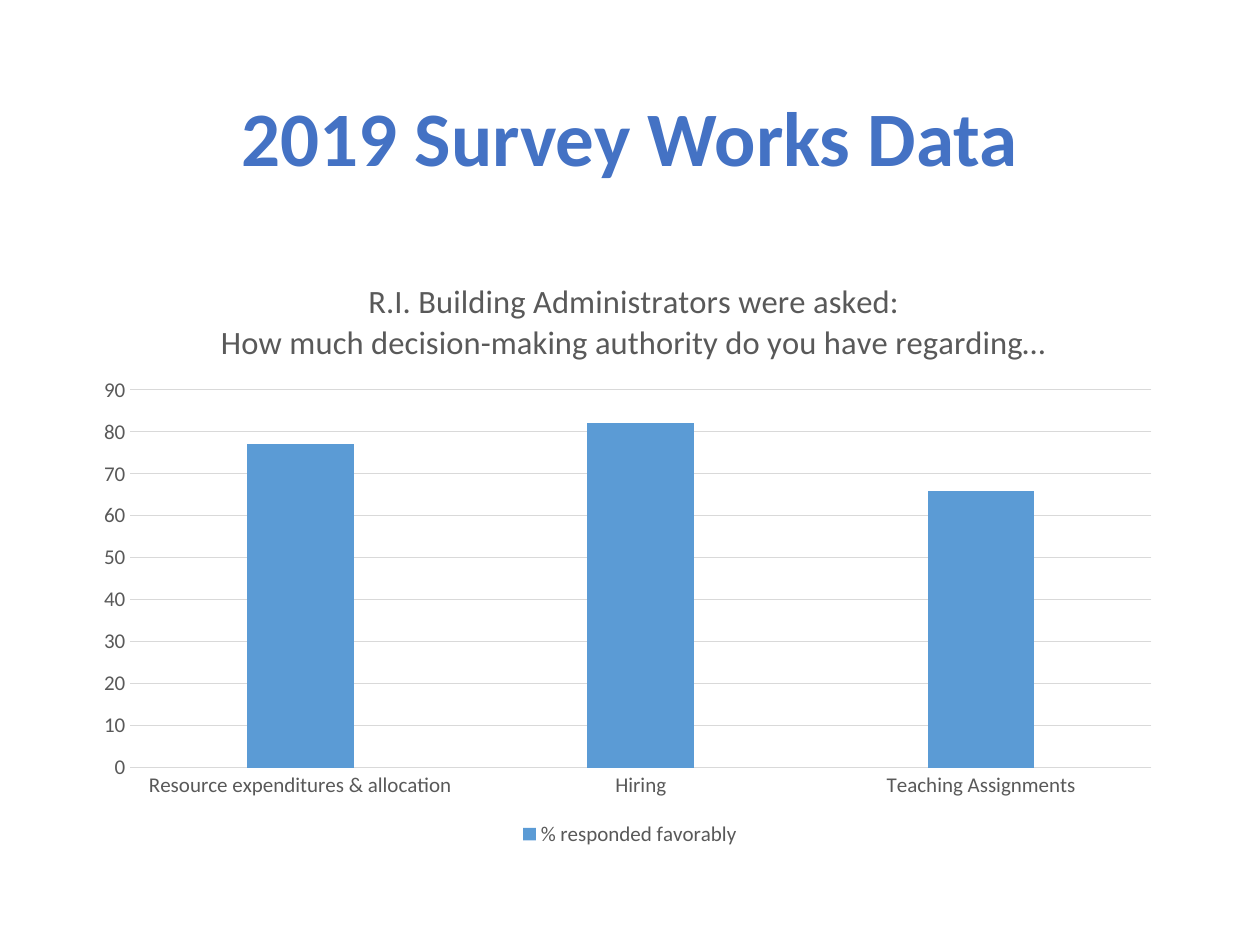
import pptx
import pptx.chart.data
import pptx.dml.color
import pptx.enum.chart
import pptx.enum.text
import pptx.oxml
import pptx.oxml.ns
import pptx.util
from pptx.util import Cm, Pt

RGBColor = pptx.dml.color.RGBColor
TITLE_BLUE = RGBColor(0x44, 0x72, 0xC4)
BAR_BLUE = RGBColor(0x5B, 0x9B, 0xD5)
TEXT_GREY = RGBColor(0x59, 0x59, 0x59)
LINE_GREY = RGBColor(0xD9, 0xD9, 0xD9)

LEFT, WIDTH = Cm(1.75), Cm(21.9)
QUESTION = (
    "R.I. Building Administrators were asked:",
    "How much decision-making authority do you have regarding…",
)
FAVORABLE = {
    "Resource expenditures & allocation": 77,
    "Hiring": 82,
    "Teaching Assignments": 66,
}


def place(element, index, **fractions):
    """Give a chart part a manual layout, in fractions of the chart area."""
    for old in element.findall(pptx.oxml.ns.qn("c:layout")):
        element.remove(old)
    target = '<c:layoutTarget val="inner"/>' if "w" in fractions else ""
    modes = "".join(f'<c:{key}Mode val="edge"/>' for key in "xy")
    values = "".join(f'<c:{key} val="{value}"/>' for key, value in fractions.items())
    element.insert(index, pptx.oxml.parse_xml(
        f'<c:layout {pptx.oxml.ns.nsdecls("c")}><c:manualLayout>'
        f"{target}{modes}{values}</c:manualLayout></c:layout>"))


class SlideBuilder:
    font_name = "Calibri"

    def __init__(self, page):
        self.page = page

    def style(self, font, size, color, bold=False):
        font.name = self.font_name
        font.size = Pt(size)
        font.bold = bold
        font.color.rgb = color

    def title(self, text):
        box = self.page.shapes.title
        box.left, box.top, box.width, box.height = LEFT, Cm(1.02), WIDTH, Cm(3.68)
        frame = box.text_frame
        frame.text = text
        frame.vertical_anchor = pptx.enum.text.MSO_ANCHOR.MIDDLE
        para = frame.paragraphs[0]
        para.alignment = pptx.enum.text.PP_ALIGN.CENTER
        para.line_spacing = 0.9
        self.style(para.font, 44, TITLE_BLUE, bold=True)

    def column_chart(self, heading, series_name, values):
        data = pptx.chart.data.CategoryChartData()
        data.categories = list(values)
        data.add_series(series_name, list(values.values()))
        chart = self.page.shapes.add_chart(
            pptx.enum.chart.XL_CHART_TYPE.COLUMN_CLUSTERED,
            LEFT, Cm(5.08), WIDTH, Cm(12.09), data).chart
        self.style(chart.font, 12, TEXT_GREY)
        self.chart_heading(chart, heading)
        self.axes(chart)

        plot = chart.plots[0]
        plot.gap_width, plot.overlap = 219, -27
        plot.vary_by_categories = False
        fill = plot.series[0].format.fill
        fill.solid()
        fill.fore_color.rgb = BAR_BLUE

        chart.has_legend = True
        chart.legend.position = pptx.enum.chart.XL_LEGEND_POSITION.BOTTOM
        chart.legend.include_in_layout = False
        self.style(chart.legend.font, 12, TEXT_GREY)
        place(chart.plots[0]._element.getparent(), 0, x=0.04, y=0.23, w=0.94, h=0.63)

    def chart_heading(self, chart, lines):
        chart.has_title = True
        frame = chart.chart_title.text_frame
        frame.text = "\n".join(lines)
        for para in frame.paragraphs:
            self.style(para.font, 18.6, TEXT_GREY)
            for span in para.runs:
                self.style(span.font, 18.6, TEXT_GREY)
        chart.chart_title.include_in_layout = False
        place(chart.chart_title._element, 1, x=0.12, y=0.04)

    def axes(self, chart):
        value_axis, category_axis = chart.value_axis, chart.category_axis
        value_axis.minimum_scale, value_axis.maximum_scale = 0, 90
        value_axis.major_unit = 10
        value_axis.has_major_gridlines = True
        value_axis.format.line.fill.background()
        for line in (value_axis.major_gridlines.format.line, category_axis.format.line):
            line.color.rgb = LINE_GREY
            line.width = Pt(0.75)
        for axis in (value_axis, category_axis):
            axis.major_tick_mark = pptx.enum.chart.XL_TICK_MARK.NONE
            axis.minor_tick_mark = pptx.enum.chart.XL_TICK_MARK.NONE
            self.style(axis.tick_labels.font, 12, TEXT_GREY)


def main():
    deck = pptx.Presentation()
    deck.slide_width, deck.slide_height = Cm(25.4), Cm(19.05)
    title_only = deck.slide_layouts[5]
    builder = SlideBuilder(deck.slides.add_slide(title_only))
    builder.title("2019 Survey Works Data")
    builder.column_chart(QUESTION, "% responded favorably", FAVORABLE)
    deck.save("out.pptx")


if __name__ == "__main__":
    main()
